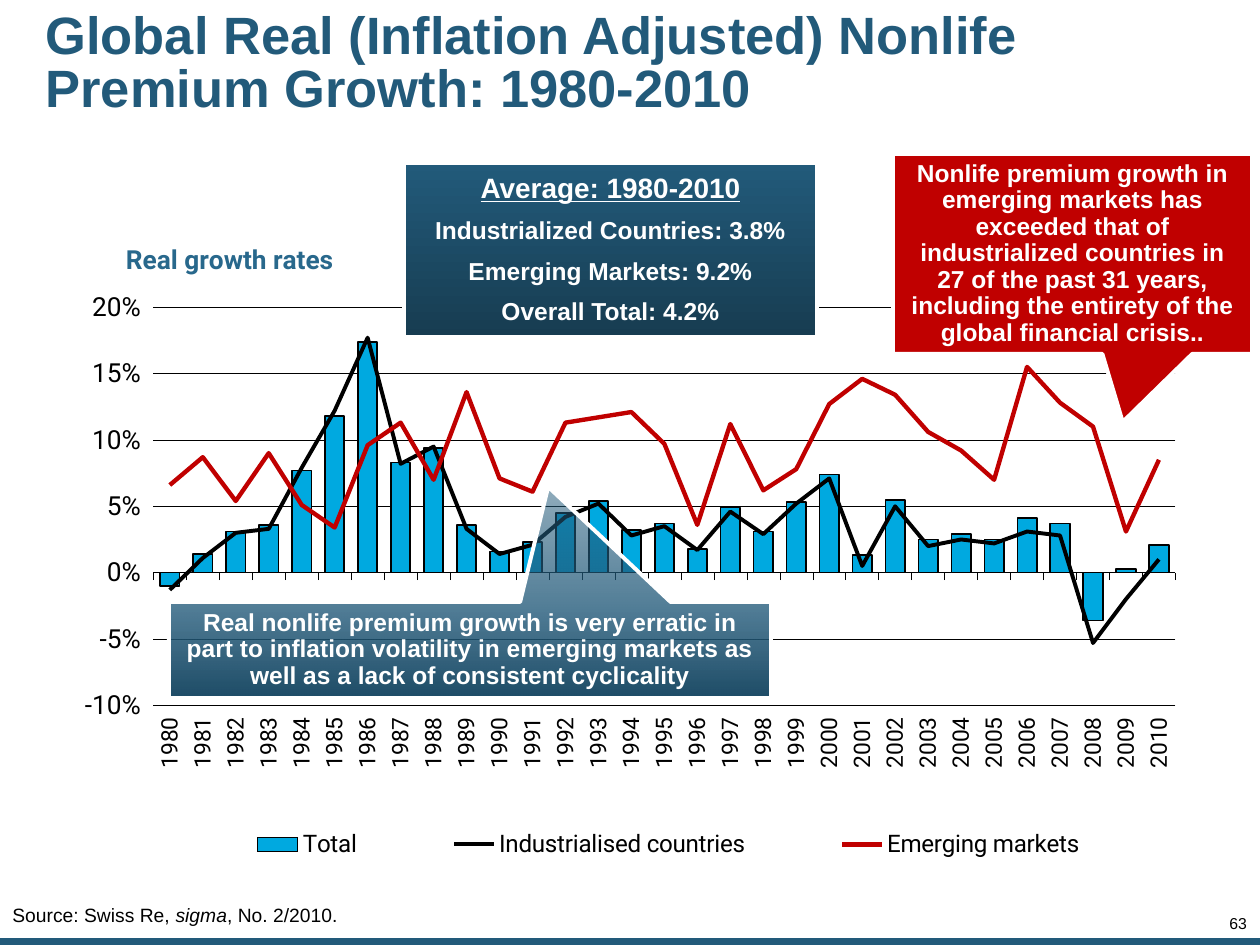
from lxml import etree
from pptx import Presentation
from pptx.chart.data import CategoryChartData
from pptx.dml.color import RGBColor
from pptx.enum.chart import (XL_CHART_TYPE, XL_LEGEND_POSITION, XL_MARKER_STYLE,
                             XL_TICK_LABEL_POSITION, XL_TICK_MARK)
from pptx.enum.shapes import MSO_SHAPE
from pptx.enum.text import MSO_ANCHOR, MSO_AUTO_SIZE, PP_ALIGN
from pptx.oxml import parse_xml
from pptx.oxml.ns import nsdecls, qn
from pptx.util import Emu, Pt

COLUMNS = XL_CHART_TYPE.COLUMN_CLUSTERED
BOTTOM = XL_LEGEND_POSITION.BOTTOM
NO_MARKER = XL_MARKER_STYLE.NONE
LABELS_LOW = XL_TICK_LABEL_POSITION.LOW
TICK_OUT = XL_TICK_MARK.OUTSIDE
RECT, CALLOUT = MSO_SHAPE.RECTANGLE, MSO_SHAPE.RECTANGULAR_CALLOUT
MIDDLE, ANCHOR_BOTTOM = MSO_ANCHOR.MIDDLE, MSO_ANCHOR.BOTTOM
LEFT, CENTER, RIGHT = PP_ALIGN.LEFT, PP_ALIGN.CENTER, PP_ALIGN.RIGHT

PX_PER_INCH = 126
COLORS = {"teal": "225A7A", "steel": "1C4B66", "navy": "173C51", "label": "28688C",
          "sky": "00A9E0", "red": "C00000", "black": "000000", "white": "FFFFFF"}

TOTAL = [-.01, .014, .031, .036, .077, .118, .174, .083, .094, .036, .016,
         .023, .045, .054, .032, .037, .018, .049, .031, .053, .074, .013,
         .055, .025, .029, .025, .041, .037, -.036, .003, .021]
INDUSTRIALISED = [-.013, .011, .03, .033, .079, .122, .177, .082, .095, .033, .014,
                  .021, .042, .052, .028, .035, .017, .046, .029, .052, .071, .005,
                  .05, .02, .025, .022, .031, .028, -.053, -.02, .01]
EMERGING = [.066, .087, .054, .09, .051, .034, .096, .113, .07, .136, .071,
            .061, .113, .117, .121, .097, .036, .112, .062, .078, .127, .146,
            .134, .106, .092, .07, .155, .128, .11, .031, .085]


def px(length):
    return Emu(round(length * 914400 / PX_PER_INCH))


def place(box):
    return [px(length) for length in box]


def rgb(name):
    return RGBColor.from_string(COLORS[name])


def style_font(font, size, color, face="Arial", bold=False):
    font.size, font.name, font.bold = Pt(size), face, bold
    font.color.rgb = rgb(color)


def style_line(line, color, width):
    line.color.rgb = rgb(color)
    line.width = Pt(width)


def add_title(slide, box, wording):
    title = slide.shapes.title
    title.left, title.top, title.width, title.height = place(box)
    frame = title.text_frame
    frame.text = wording
    frame.auto_size = MSO_AUTO_SIZE.NONE
    frame.vertical_anchor = ANCHOR_BOTTOM
    heading = frame.paragraphs[0]
    heading.alignment, heading.line_spacing = LEFT, 0.85
    for run in heading.runs:
        style_font(run.font, 30, "teal", bold=True)


def add_footer(slide, box):
    """Bottom band with the source note and the page number above it."""
    left, top, width, height = box
    band = slide.shapes.add_shape(RECT, *place((left, top + height - 7, width, 7)))
    band.shadow.inherit = False
    band.fill.solid()
    band.fill.fore_color.rgb = rgb("teal")
    band.line.fill.background()

    source = slide.shapes.add_textbox(*place((left, top, 1135, 37))).text_frame
    source.word_wrap = True
    for wording, italic in (("Source: Swiss Re, ", False), ("sigma", True),
                            (", No. 2/2010.", False)):
        run = source.paragraphs[0].add_run()
        run.text = wording
        style_font(run.font, 11, "black")
        run.font.italic = italic

    page = slide.shapes.add_textbox(*place((left + 1186, top + 20, 61, 16))).text_frame
    page.margin_left = page.margin_right = page.margin_top = page.margin_bottom = 0
    page.word_wrap = True
    page.text = "63"
    page.paragraphs[0].alignment = RIGHT
    page.paragraphs[0].line_spacing = 0.85
    style_font(page.paragraphs[0].runs[0].font, 9, "black")


def set_layout(parent, before, x, y, width=None, height=None, inner=False):
    """Fix a chart part by fractions of the chart; before names the elements that follow."""
    for old in parent.findall(qn("c:layout")):
        parent.remove(old)
    layout = parse_xml(f"<c:layout {nsdecls('c')}><c:manualLayout/></c:layout>")
    values = [("layoutTarget", "inner")] if inner else []
    values += [("xMode", "edge"), ("yMode", "edge"), ("x", x), ("y", y)]
    if width:
        values += [("w", width), ("h", height)]
    for tag, value in values:
        etree.SubElement(layout[0], qn(f"c:{tag}")).set("val", str(value))
    follower = next(child for child in parent if child.tag in map(qn, before))
    follower.addprevious(layout)


def move_to_line_plot(chart, count):
    """Turn the last count column series into lines on the same axes."""
    bars = chart.plots[0]._element
    lines = parse_xml(f'<c:lineChart {nsdecls("c")}><c:grouping val="standard"/>'
                      '<c:varyColors val="0"/><c:marker val="1"/></c:lineChart>')
    for series in bars.findall(qn("c:ser"))[-count:]:
        for flag in series.findall(qn("c:invertIfNegative")):
            series.remove(flag)
        lines.find(qn("c:marker")).addprevious(series)
    for axis in bars.findall(qn("c:axId")):
        etree.SubElement(lines, qn("c:axId")).set("val", axis.get("val"))
    bars.addnext(lines)


def style_axes(chart):
    years, growth = chart.category_axis, chart.value_axis
    style_font(years.tick_labels.font, 13, "black", "Roboto")
    years.tick_label_position = LABELS_LOW
    years.major_tick_mark = growth.major_tick_mark = TICK_OUT
    style_line(years.format.line, "black", 0.25)
    years._element.find(qn("c:txPr")).find(qn("a:bodyPr")).set("rot", "-5400000")
    skip = parse_xml(f'<c:tickLblSkip {nsdecls("c")} val="1"/>')
    years._element.find(qn("c:noMultiLvlLbl")).addprevious(skip)

    style_font(growth.tick_labels.font, 15, "black", "Roboto")
    growth.tick_labels.number_format = "0%"
    growth.tick_labels.number_format_is_linked = False
    growth.minimum_scale, growth.maximum_scale, growth.major_unit = -0.1, 0.2, 0.05
    growth.format.line.fill.background()
    style_line(growth.major_gridlines.format.line, "black", 0.25)


def add_growth_chart(slide, box):
    data = CategoryChartData(number_format="0.0%")
    data.categories = [str(year) for year in range(1980, 2011)]
    data.add_series("Total", TOTAL)
    data.add_series("Industrialised countries", INDUSTRIALISED)
    data.add_series("Emerging markets", EMERGING)
    chart = slide.shapes.add_chart(COLUMNS, *place(box), data).chart
    style_font(chart.font, 15, "black", "Roboto")
    move_to_line_plot(chart, 2)
    style_axes(chart)

    columns, lines = chart.plots
    columns.gap_width = 70
    columns.vary_by_categories = False
    total = columns.series[0]
    total.invert_if_negative = False
    total.format.fill.solid()
    total.format.fill.fore_color.rgb = rgb("sky")
    style_line(total.format.line, "black", 1)
    for market, color, width in zip(lines.series, ("black", "red"), (2.25, 2.5)):
        market.smooth = False
        market.marker.style = NO_MARKER
        style_line(market.format.line, color, width)

    chart.has_title = True
    caption = chart.chart_title
    caption.text_frame.text = "Real growth rates"
    style_font(caption.text_frame.paragraphs[0].runs[0].font, 15, "label", "Roboto", True)
    set_layout(caption._element, ["c:overlay"], 0.08, 0.03)

    chart.has_legend = True
    chart.legend.position = BOTTOM
    chart.legend.include_in_layout = False
    style_font(chart.legend.font, 13.8, "black", "Roboto")
    set_layout(chart.legend._element, ["c:overlay"], 0.12, 0.91, 0.84, 0.07)
    set_layout(columns._element.getparent(), ["c:barChart"], 0.107, 0.136, 0.859, 0.6, True)


def add_panel(slide, box, lines, fill, pointer=None, opacity=100):
    """Boxed message; fill is one or two colour names, pointer the callout tip."""
    panel = slide.shapes.add_shape(CALLOUT if pointer else RECT, *place(box))
    panel.shadow.inherit = False
    if pointer:
        panel.adjustments[0], panel.adjustments[1] = pointer
    if len(fill) == 1:
        panel.fill.solid()
        panel.fill.fore_color.rgb = rgb(fill[0])
    else:
        panel.fill.gradient()
        panel.fill.gradient_angle = 270
        for stop, color, position in zip(panel.fill.gradient_stops, fill, (0, 1)):
            stop.color.rgb = rgb(color)
            stop.position = position
        if opacity < 100:
            top_color = next(panel._element.spPr.iter(qn("a:srgbClr")))
            etree.SubElement(top_color, qn("a:alpha")).set("val", str(opacity * 1000))
    style_line(panel.line, "white", 2.25)

    frame = panel.text_frame
    frame.word_wrap = True
    frame.vertical_anchor = MIDDLE
    frame.margin_left = frame.margin_right = px(13)
    frame.margin_top = frame.margin_bottom = px(13)
    frame.text = "\n".join(lines)
    for index, message in enumerate(frame.paragraphs):
        message.alignment, message.line_spacing = CENTER, 0.9
        if index:
            message.space_before = Pt(8)
        heading = index == 0 and len(lines) > 1
        style_font(message.runs[0].font, 16 if heading else 14, "white", bold=True)
        message.runs[0].font.underline = heading


def main():
    deck = Presentation()
    deck.slide_width, deck.slide_height = px(1260), px(945)
    slide = deck.slides.add_slide(deck.slide_layouts[5])
    add_title(slide, (33, 44, 1102, 81),
              "Global Real (Inflation Adjusted) Nonlife\vPremium Growth: 1980-2010")
    add_footer(slide, (0, 897, 1260, 48))
    add_growth_chart(slide, (26, 217, 1190, 664))
    add_panel(slide, (893, 154, 359, 200),
              ["Nonlife premium growth in emerging markets has exceeded that of "
               "industrialized countries in 27 of the past 31 years, including the "
               "entirety of the global financial crisis.."], ["red"], (0.14, 0.84))
    add_panel(slide, (169, 602, 602, 96),
              ["Real nonlife premium growth is very erratic in part to inflation "
               "volatility in emerging markets as well as a lack of consistent "
               "cyclicality"], ["teal", "steel"], (0.13, -1.7), opacity=50)
    add_panel(slide, (404, 163, 413, 174),
              ["Average: 1980-2010", "Industrialized Countries: 3.8%",
               "Emerging Markets: 9.2%", "Overall Total: 4.2%"], ["teal", "navy"])
    deck.save("out.pptx")


if __name__ == "__main__":
    main()
